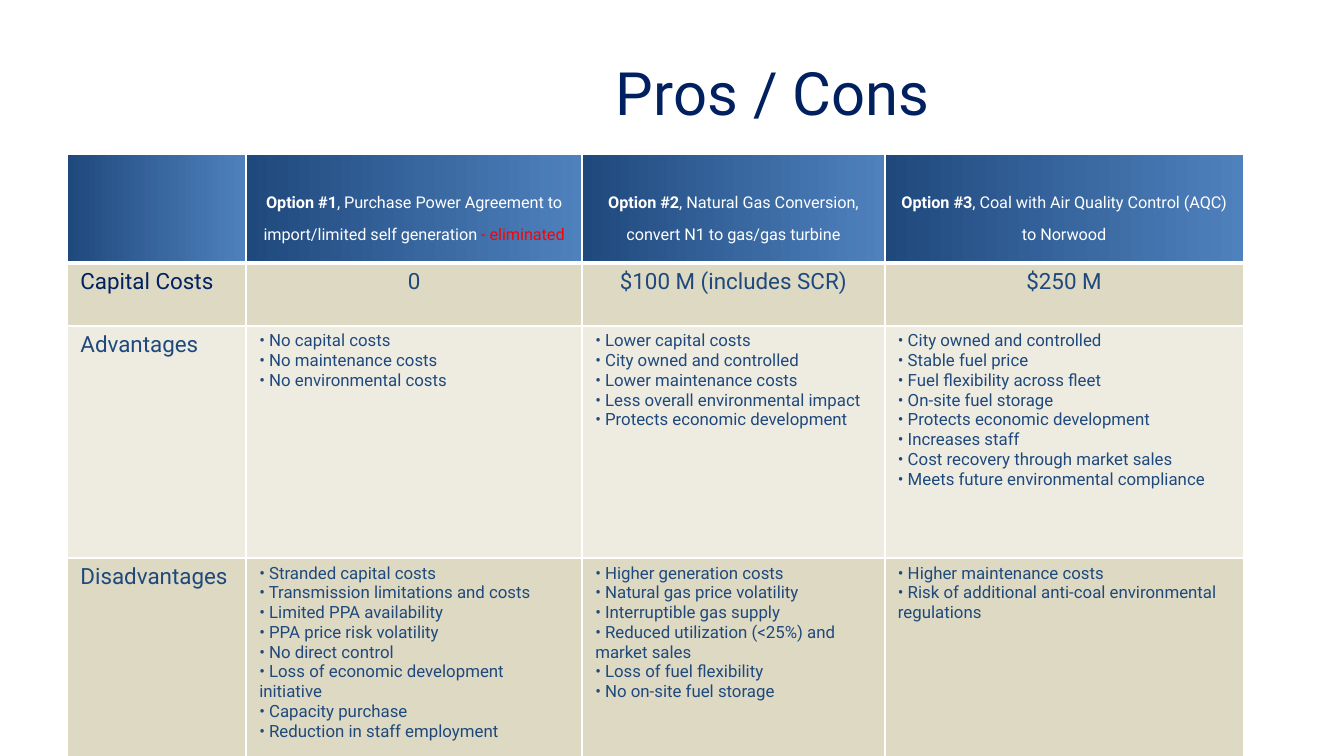
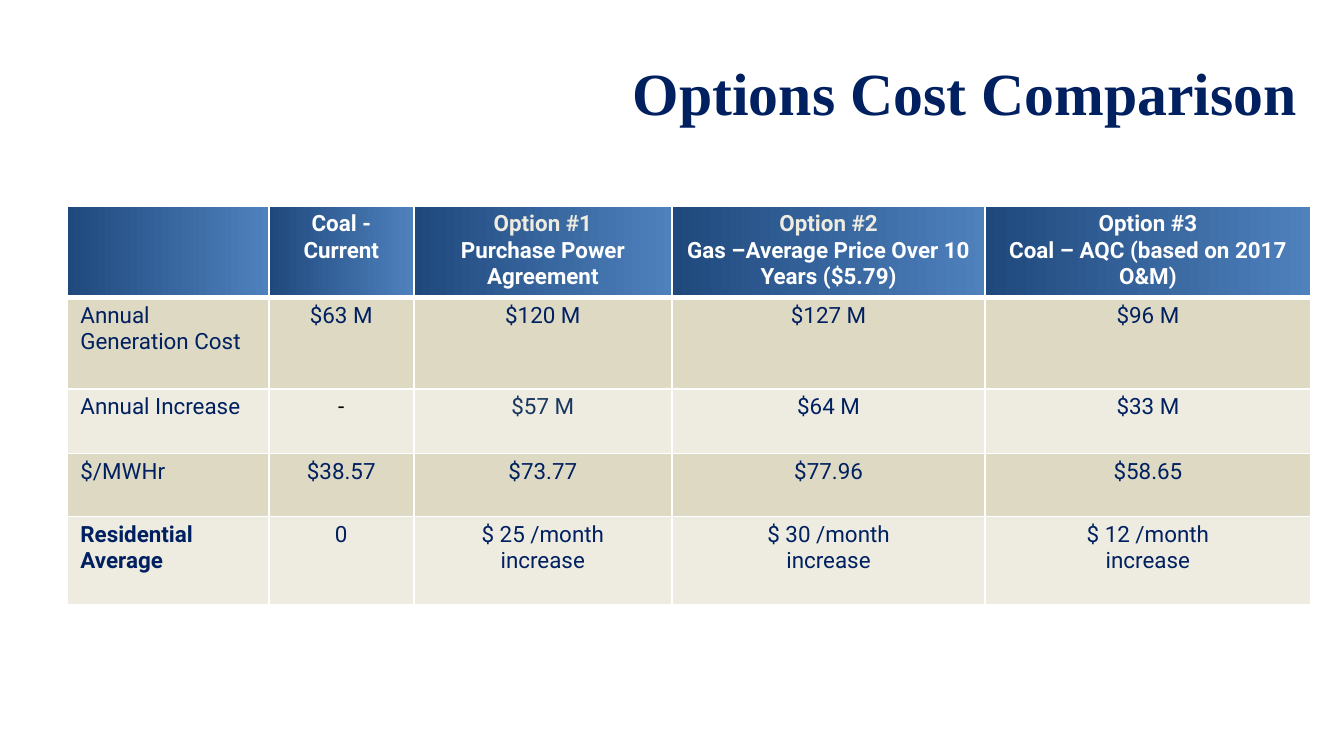
from pptx import Presentation
from pptx.util import Cm, Pt
from pptx.dml.color import RGBColor
from pptx.enum.text import MSO_ANCHOR, PP_ALIGN
from pptx.oxml import parse_xml
from pptx.oxml.ns import nsdecls

LEFT, MID, RIGHT = PP_ALIGN.LEFT, PP_ALIGN.CENTER, PP_ALIGN.RIGHT
CENTER = MSO_ANCHOR.MIDDLE

PROS = {
    "title": "Pros / Cons",
    "look": "plain",
    "align": MID,
    "place": (5.08, 0.79, 19.05, 1.9),
    "top": 2.92,
    "cols": [3.38, 6.35, 5.72, 6.78],
    "rows": [2.03, 1.19, 4.39, 4.45],
    "pad": 0.68,
    "head": "raised",
    "body": "blue",
    "list": "point",
    "mark": "• ",
    "cells": [
        ["",
         [[("Option #1", "strong"),
           (", Purchase Power Agreement to import/limited self generation ", "raised"),
           ("- eliminated", "alert")]],
         [[("Option #2", "strong"),
           (", Natural Gas Conversion, convert N1 to gas/gas turbine", "raised")]],
         [[("Option #3", "strong"),
           (", Coal with Air Quality Control (AQC) to Norwood", "raised")]]],
        [[[("Capital Costs", "navy")]], "0", "$100 M (includes SCR)", "$250 M"],
        ["Advantages",
         ["No capital costs", "No maintenance costs", "No environmental costs"],
         ["Lower capital costs", "City owned and controlled",
          "Lower maintenance costs", "Less overall environmental impact",
          "Protects economic development"],
         ["City owned and controlled", "Stable fuel price",
          "Fuel flexibility across fleet", "On-site fuel storage",
          "Protects economic development", "Increases staff",
          "Cost recovery through market sales",
          "Meets future environmental compliance"]],
        ["Disadvantages",
         ["Stranded capital costs", "Transmission limitations and costs",
          "Limited PPA availability", "PPA price risk volatility",
          "No direct control", "Loss of economic development initiative",
          "Capacity purchase", "Reduction in staff employment"],
         ["Higher generation costs", "Natural gas price volatility",
          "Interruptible gas supply",
          "Reduced utilization (<25%) and market sales",
          "Loss of fuel flexibility", "No on-site fuel storage"],
         ["Higher maintenance costs",
          "Risk of additional anti-coal environmental regulations"]],
    ],
}

COSTS = {
    "title": "Options Cost Comparison",
    "look": "serif",
    "align": RIGHT,
    "place": (3.38, 0.79, 21.39, 1.9),
    "top": 3.89,
    "cols": [3.81, 2.74, 4.88, 5.92, 6.15],
    "rows": [1.73, 1.73, 1.22, 1.19, 1.68],
    "pad": 0.1,
    "head": "head",
    "body": "navy",
    "list": "navy",
    "mark": "",
    "cells": [
        ["", "Coal - Current",
         [[("Option #1", "cream")], "Purchase Power Agreement"],
         [[("Option #2", "cream")], "Gas –Average Price Over 10 Years ($5.79)"],
         ["Option #3", "Coal – AQC (based on 2017 O&M)"]],
        ["Annual Generation Cost", "$63 M", "$120 M", "$127 M", "$96 M"],
        ["Annual Increase", [[("-", "black")]], [[("$57 M", "slate")]],
         "$64 M", "$33 M"],
        ["$/MWHr", "$38.57", "$73.77", "$77.96", "$58.65"],
        [[[("Residential Average", "total")]], "0",
         ["$ 25 /month", "increase"], ["$ 30 /month", "increase"],
         ["$ 12 /month", "increase"]],
    ],
}


def style(color, size=12, bold=False, name="Roboto", lift=0):
    return {"color": color, "lift": lift,
            "font": {"name": name, "size": Pt(size), "bold": bold}}


class Theme:
    size = (25.4, 14.29)
    left = 1.27
    pads = (0.25, 0.1)
    fade = ("1F497D", "4F81BD")
    bands = ("EEECE1", "DDD9C3")
    rule = "FFFFFF"
    thin, thick = 1, 3
    text = {
        "plain": style("002060", 32),
        "serif": style("002060", 32, True, "Times New Roman"),
        "raised": style("FFFFFF", 15, lift=30),
        "strong": style("FFFFFF", 15, True, lift=30),
        "alert": style("FF0000", 15, lift=30),
        "head": style("FFFFFF", bold=True),
        "cream": style("EEECE1", bold=True),
        "navy": style("002060"),
        "total": style("002060", bold=True),
        "blue": style("1F497D"),
        "slate": style("17375E"),
        "black": style("000000"),
        "point": style("1F497D", 9),
    }


def rgb(code):
    return RGBColor.from_string(code)


def write(frame, lines, look, align, mark=""):
    for i, line in enumerate(lines):
        para = frame.paragraphs[0] if i == 0 else frame.add_paragraph()
        para.alignment = align
        parts = [(mark + line, look)] if isinstance(line, str) else line
        for words, kind in parts:
            run = para.add_run()
            run.text = words
            form = Theme.text[kind]
            for key, value in form["font"].items():
                setattr(run.font, key, value)
            run.font.color.rgb = rgb(form["color"])
            if form["lift"]:
                run._r.get_or_add_rPr().set("baseline", str(form["lift"] * 1000))


def edge(cell, row):
    wide = {"T": row == 1, "B": row == 0}
    props = cell._tc.get_or_add_tcPr()
    for side in "LRTB":
        width = Pt(Theme.thick if wide.get(side) else Theme.thin)
        props.append(parse_xml(
            f'<a:ln{side} {nsdecls("a")} w="{width}"><a:solidFill>'
            f'<a:srgbClr val="{Theme.rule}"/></a:solidFill></a:ln{side}>'))


def paint(cell, row):
    if row:
        cell.fill.solid()
        cell.fill.fore_color.rgb = rgb(Theme.bands[row % 2])
        return
    cell.fill.gradient()
    cell.fill.gradient_angle = 0
    for i, stop in enumerate(cell.fill.gradient_stops):
        stop.position = i
        stop.color.rgb = rgb(Theme.fade[i])


def fill_cell(cell, item, row, col, page):
    side, end = Theme.pads
    pads = {"margin_left": side, "margin_right": side,
            "margin_top": end if row else page["pad"], "margin_bottom": end}
    for key, value in pads.items():
        setattr(cell, key, Cm(value))
    edge(cell, row)
    paint(cell, row)
    if not item:
        return
    many = isinstance(item, list)
    listed = many and row > 0
    mark = page["mark"] if listed else ""
    look = page["list"] if listed else page["body"] if row else page["head"]
    align = LEFT if col == 0 or mark else MID
    write(cell.text_frame, item if many else [item], look, align, mark)


def add_title(slide, page):
    frame = slide.shapes.add_textbox(*map(Cm, page["place"])).text_frame
    frame.word_wrap = True
    frame.vertical_anchor = CENTER
    write(frame, [page["title"]], page["look"], page["align"])


def add_grid(slide, page):
    cols, rows = page["cols"], page["rows"]
    grid = slide.shapes.add_table(
        len(rows), len(cols), Cm(Theme.left), Cm(page["top"]),
        Cm(sum(cols)), Cm(sum(rows))).table
    grid.first_row = grid.horz_banding = False
    for col, width in zip(grid.columns, cols):
        col.width = Cm(width)
    for row, height in zip(grid.rows, rows):
        row.height = Cm(height)
    for r, line in enumerate(page["cells"]):
        for c, item in enumerate(line):
            fill_cell(grid.cell(r, c), item, r, c, page)


def main():
    deck = Presentation()
    deck.slide_width, deck.slide_height = map(Cm, Theme.size)
    for page in (PROS, COSTS):
        slide = deck.slides.add_slide(deck.slide_layouts[6])
        add_title(slide, page)
        add_grid(slide, page)
    deck.save("out.pptx")


if __name__ == "__main__":
    main()
